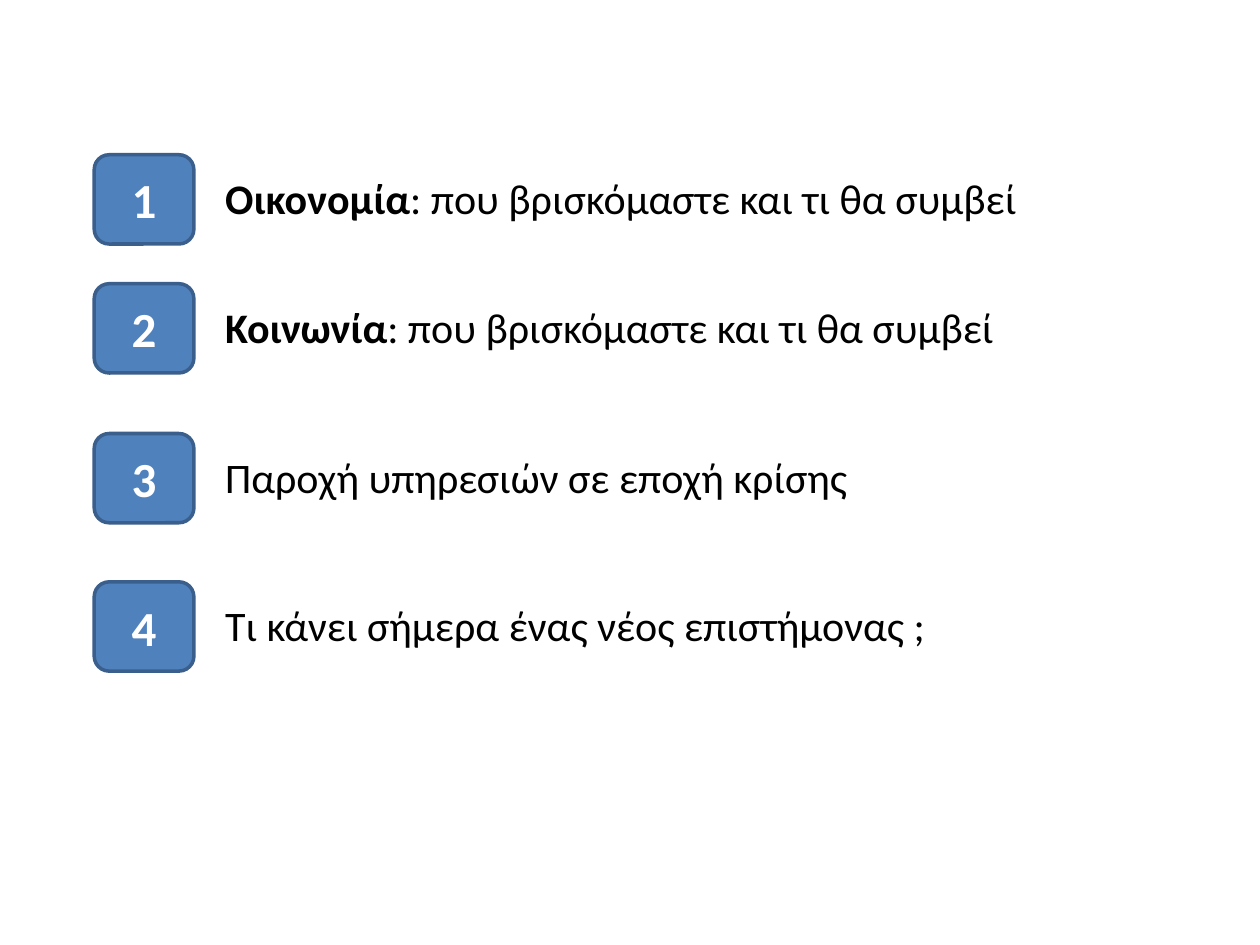
"""Build an agenda slide with four numbered topics."""
from pptx import Presentation
from pptx import util as u
from pptx.dml.color import RGBColor
from pptx.enum import shapes, text

BLUE = RGBColor(0x4F, 0x81, 0xBD)
DARK_BLUE = RGBColor(0x3A, 0x5F, 0x8C)
WHITE = RGBColor(0xFF, 0xFF, 0xFF)
BLACK = RGBColor(0x00, 0x00, 0x00)

BADGE_LEFT, BADGE_WIDTH, BADGE_HEIGHT = 1.9, 2.01, 1.8
TOPIC_LEFT, TOPIC_HEIGHT, TOPIC_DROP = 4.29, 1.27, 0.23
NUMBER_FONT = {"name": "Calibri", "size": u.Pt(28), "bold": True}
TOPIC_FONT = {"name": "Calibri", "size": u.Pt(24)}
OUTLOOK = ": που βρισκόμαστε και τι θα συμβεί"

TOPICS = [
    (3.12, 16.48, "Οικονομία", OUTLOOK),
    (5.72, 16.0, "Κοινωνία", OUTLOOK),
    (8.74, 13.18, "", "Παροχή υπηρεσιών σε εποχή κρίσης"),
    (11.73, 14.76, "", "Τι κάνει σήμερα ένας νέος επιστήμονας ;"),
]


def add_span(para, words, color, **formats):
    """Add a run of words in the given colour and font formats."""
    span = para.add_run()
    span.text = words
    span.font.color.rgb = color
    for name, value in formats.items():
        setattr(span.font, name, value)


def add_badge(page, number, top):
    """Add a rounded blue badge holding a number."""
    badge = page.shapes.add_shape(
        shapes.MSO_SHAPE.ROUNDED_RECTANGLE,
        u.Cm(BADGE_LEFT), u.Cm(top), u.Cm(BADGE_WIDTH), u.Cm(BADGE_HEIGHT))
    badge.shadow.inherit = False
    badge.fill.solid()
    badge.fill.fore_color.rgb = BLUE
    badge.line.color.rgb = DARK_BLUE
    badge.line.width = u.Pt(2)
    badge.text_frame.vertical_anchor = text.MSO_ANCHOR.MIDDLE
    para = badge.text_frame.paragraphs[0]
    para.alignment = text.PP_ALIGN.CENTER
    add_span(para, str(number), WHITE, **NUMBER_FONT)


def add_topic(page, top, width, lead, rest):
    """Add a topic line with an optional bold lead."""
    box = page.shapes.add_textbox(
        u.Cm(TOPIC_LEFT), u.Cm(top), u.Cm(width), u.Cm(TOPIC_HEIGHT))
    box.text_frame.word_wrap = False
    box.text_frame.auto_size = text.MSO_AUTO_SIZE.SHAPE_TO_FIT_TEXT
    para = box.text_frame.paragraphs[0]
    if lead:
        add_span(para, lead, BLACK, bold=True, **TOPIC_FONT)
    add_span(para, rest, BLACK, **TOPIC_FONT)


def main():
    """Create the deck and save it."""
    deck = Presentation()
    deck.slide_width, deck.slide_height = u.Cm(25.4), u.Cm(19.05)
    page = deck.slides.add_slide(deck.slide_layouts[6])
    for number, (top, width, lead, rest) in enumerate(TOPICS, start=1):
        add_badge(page, number, top)
        add_topic(page, top + TOPIC_DROP, width, lead, rest)
    deck.save("out.pptx")


if __name__ == "__main__":
    main()
